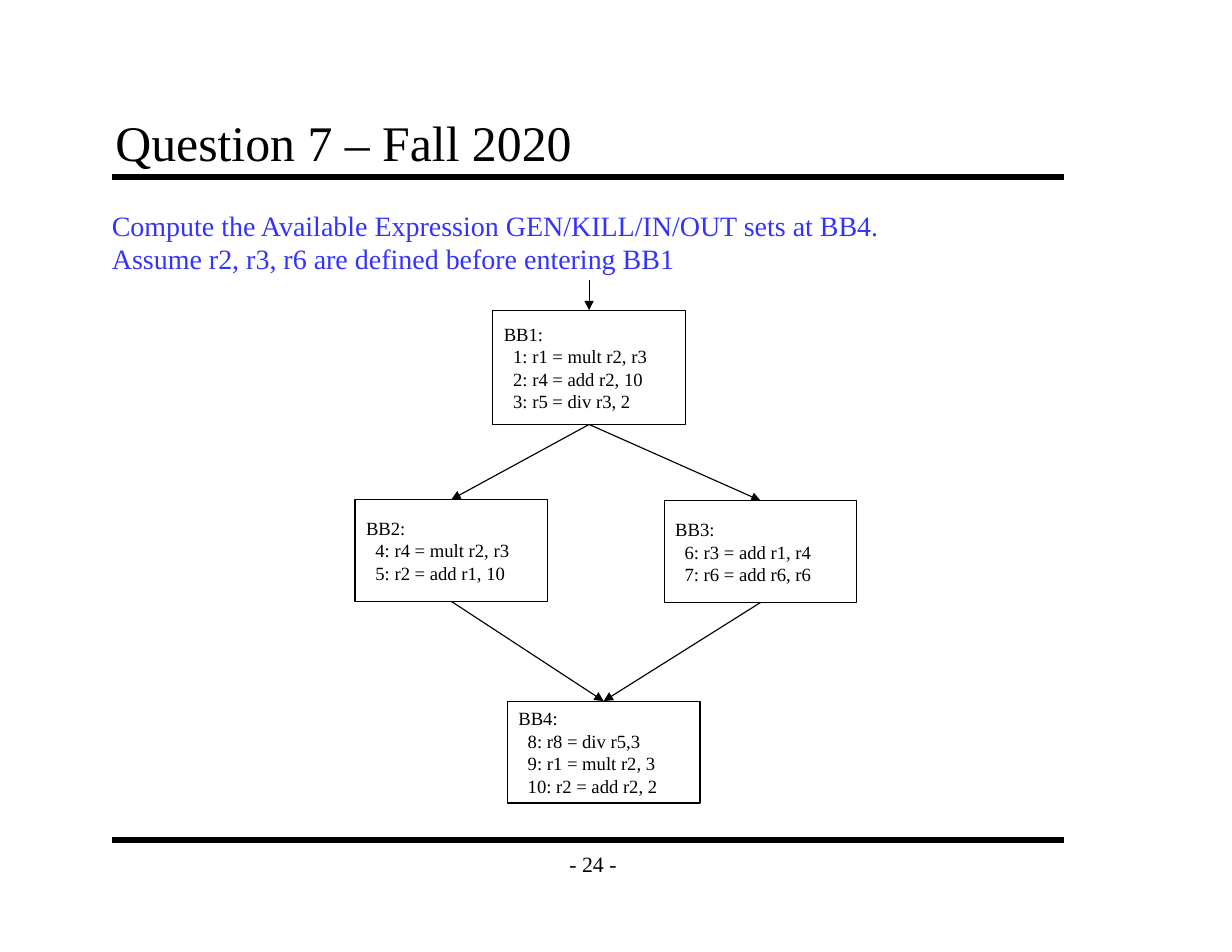
from lxml import etree
from pptx import Presentation
from pptx.dml.color import RGBColor
from pptx.enum.shapes import MSO_CONNECTOR, MSO_SHAPE
from pptx.enum.text import MSO_ANCHOR, MSO_AUTO_SIZE, PP_ALIGN
from pptx.oxml.ns import qn
from pptx.util import Inches, Pt

LINE, RECT = MSO_CONNECTOR.STRAIGHT, MSO_SHAPE.RECTANGLE
MIDDLE, BASE = MSO_ANCHOR.MIDDLE, MSO_ANCHOR.BOTTOM
LEFT, CENTER = PP_ALIGN.LEFT, PP_ALIGN.CENTER
FIXED = MSO_AUTO_SIZE.NONE
TOP, BOTTOM = 0, 2  # connection sites

COLORS = {"ink": "000000", "paper": "FFFFFF", "task": "3333FF"}
FONT = "Times New Roman"


def color(name):
    return RGBColor.from_string(COLORS[name])


class Page:
    def __init__(self, deck):
        self.slide = deck.slides.add_slide(deck.slide_layouts[5])
        self.shapes = self.slide.shapes

    def style(self, para, size, ink="ink", align=LEFT):
        para.alignment = align
        para.font.name = FONT
        para.font.size = Pt(size)
        para.font.color.rgb = color(ink)

    def pad(self, frame):
        frame.margin_left = frame.margin_right = Inches(0.11)
        frame.margin_top = frame.margin_bottom = Inches(0.06)

    def title(self, text, x, y, w, h):
        shape = self.shapes.title
        shape.left, shape.top = Inches(x), Inches(y)
        shape.width, shape.height = Inches(w), Inches(h)
        frame = shape.text_frame
        frame.text = text
        frame.auto_size = FIXED
        frame.vertical_anchor = BASE
        self.pad(frame)
        self.style(frame.paragraphs[0], 32)

    def text(self, text, x, y, w, h, size, ink="ink", align=LEFT):
        box = self.shapes.add_textbox(Inches(x), Inches(y), Inches(w), Inches(h))
        frame = box.text_frame
        frame.word_wrap = False
        frame.paragraphs[0].text = text
        self.style(frame.paragraphs[0], size, ink, align)
        return frame

    def block(self, name, code, x, y, h):
        box = self.shapes.add_shape(RECT, Inches(x), Inches(y), Inches(1.72), Inches(h))
        box.shadow.inherit = False
        box.fill.solid()
        box.fill.fore_color.rgb = color("paper")
        box.line.color.rgb = color("ink")
        box.line.width = Pt(0.75)
        frame = box.text_frame
        frame.vertical_anchor = MIDDLE
        frame.text = "\n".join([name + ":"] + code)
        for i, para in enumerate(frame.paragraphs):
            self.style(para, 12)
            if i:  # instructions are indented under the block name
                para._p.get_or_add_pPr().set("marL", str(Pt(6)))
        return box

    def line(self, x1, y1, x2, y2, width):
        line = self.shapes.add_connector(
            LINE, Inches(x1), Inches(y1), Inches(x2), Inches(y2))
        line.line.color.rgb = color("ink")
        line.line.width = Pt(width)
        etree.SubElement(line._element.spPr, qn("a:effectLst"))
        return line

    def arrow(self, start, end):
        """Point to the top of end, from the bottom of start or from above."""
        x = (end.left + end.width / 2) / Inches(1)
        y = end.top / Inches(1)
        line = self.line(x, y - 0.27, x, y, 0.75)
        if start is not None:
            line.begin_connect(start, BOTTOM)
        line.end_connect(end, TOP)
        etree.SubElement(line.line._get_or_add_ln(), qn("a:tailEnd"), type="triangle")


def main():
    deck = Presentation()
    deck.slide_width, deck.slide_height = Inches(11), Inches(8.5)
    page = Page(deck)

    # Rules, page number and title
    for y in (1.58, 7.5):
        page.line(1, y, 9.5, y, 4)
    foot = page.text("- 24 -", 4.92, 7.5, 0.75, 0.42, 14, align=CENTER)
    foot.vertical_anchor = MIDDLE
    page.pad(foot)
    page.title("Question 7 – Fall 2020", 0.92, 0.92, 8.5, 0.67)

    # Basic blocks
    bb1 = page.block("BB1", ["1: r1 = mult r2, r3", "2: r4 = add r2, 10",
                             "3: r5 = div r3, 2"], 4.4, 2.77, 1.02)
    bb2 = page.block("BB2", ["4: r4 = mult r2, r3", "5: r2 = add r1, 10"],
                     3.17, 4.46, 0.91)
    bb3 = page.block("BB3", ["6: r3 = add r1, r4", "7: r6 = add r6, r6"],
                     5.93, 4.47, 0.91)
    bb4 = page.block("BB4", ["8: r8 = div r5,3", "9: r1 = mult r2, 3",
                             "10: r2 = add r2, 2"], 4.53, 6.26, 0.91)

    # Control flow
    for start, end in ((bb1, bb2), (bb1, bb3), (bb2, bb4), (bb3, bb4), (None, bb1)):
        page.arrow(start, end)

    # Task
    page.text("Compute the Available Expression GEN/KILL/IN/OUT sets at BB4.\v"
              "Assume r2, r3, r6 are defined before entering BB1",
              0.9, 1.81, 7.12, 0.71, 18, "task")

    deck.save("out.pptx")


if __name__ == "__main__":
    main()
